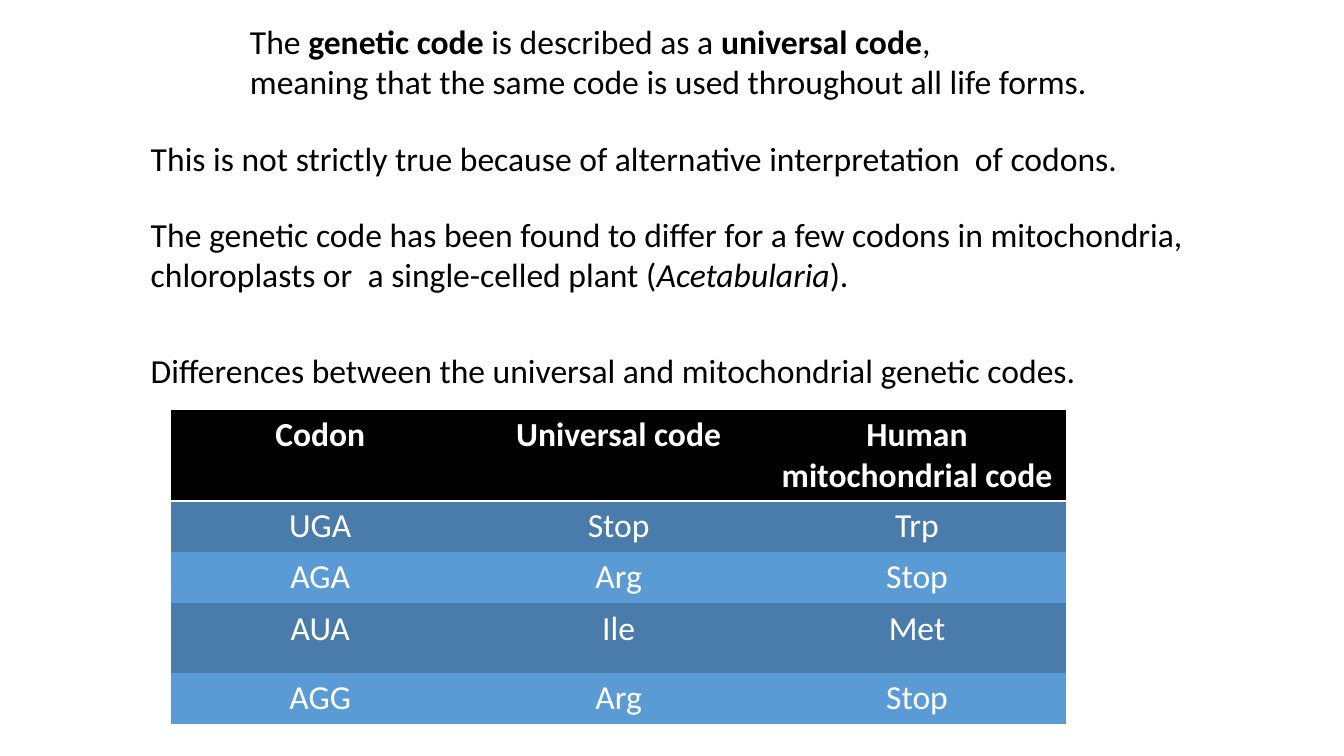
"""Build a slide on the universal genetic code and its mitochondrial exceptions."""
from lxml import etree
from pptx import Presentation
from pptx.dml.color import RGBColor
from pptx.enum.text import PP_ALIGN
from pptx.oxml.ns import qn
from pptx.util import Cm, Pt

CENTER = PP_ALIGN.CENTER
BLACK = RGBColor(0x00, 0x00, 0x00)
WHITE = RGBColor(0xFF, 0xFF, 0xFF)
DARK_BLUE = RGBColor(0x49, 0x7C, 0xAB)
LIGHT_BLUE = RGBColor(0x5B, 0x9B, 0xD5)
PLAIN_TABLE_STYLE = "{2D5ABB26-0587-4C30-8999-92F81FD0307C}"


def add_span(para, text, color, bold=False, italic=False):
    span = para.add_run()
    span.text = text
    span.font.name = "Calibri"
    span.font.size = Pt(24)
    span.font.color.rgb = color
    span.font.bold = bold
    span.font.italic = italic


deck = Presentation()
deck.slide_width = Cm(33.87)
deck.slide_height = Cm(19.05)
page = deck.slides.add_slide(deck.slide_layouts[6])

statements = [
    (6.05, 0.4, 21.8, [
        [("The ", ""), ("genetic code ", "bold"), ("is described as a ", ""),
         ("universal code", "bold"), (",", "")],
        [("meaning that the same code is used throughout all life forms.", "")],
    ]),
    (3.55, 3.36, 25.3, [
        [("This is not strictly true because of alternative interpretation  of codons.", "")],
    ]),
    (3.55, 5.27, 26.8, [
        [("The genetic code has been found to differ for a few codons in mitochondria,", "")],
        [("chloroplasts or  a single-celled plant (", ""), ("Acetabularia", "italic"), (").", "")],
    ]),
    (3.55, 8.7, 24.08, [
        [("Differences between the universal and mitochondrial genetic codes.", "")],
    ]),
]
for left, top, width, lines in statements:
    box = page.shapes.add_textbox(Cm(left), Cm(top), Cm(width), Cm(0.25 + 1.03 * len(lines)))
    frame = box.text_frame
    frame.word_wrap = True
    for index, line in enumerate(lines):
        para = frame.paragraphs[0] if index == 0 else frame.add_paragraph()
        for text, style in line:
            add_span(para, text, BLACK, style == "bold", style == "italic")

codon_rows = [
    ("Codon", "Universal code", "Human mitochondrial code"),
    ("UGA", "Stop", "Trp"),
    ("AGA", "Arg", "Stop"),
    ("AUA", "Ile", "Met"),
    ("AGG", "Arg", "Stop"),
]
row_heights = [2.29, 1.29, 1.29, 1.75, 1.29]
row_fills = [BLACK, DARK_BLUE, LIGHT_BLUE, DARK_BLUE, LIGHT_BLUE]

table = page.shapes.add_table(
    len(codon_rows), 3, Cm(4.31), Cm(10.33), Cm(22.56), Cm(sum(row_heights))).table
table.horz_banding = False
table._tbl.tblPr.find(qn("a:tableStyleId")).text = PLAIN_TABLE_STYLE
for column in table.columns:
    column.width = Cm(7.52)

for row_index, labels in enumerate(codon_rows):
    is_header = row_index == 0
    table.rows[row_index].height = Cm(row_heights[row_index])
    for column_index, label in enumerate(labels):
        cell = table.cell(row_index, column_index)
        cell.fill.solid()
        cell.fill.fore_color.rgb = row_fills[row_index]
        para = cell.text_frame.paragraphs[0]
        para.alignment = CENTER
        add_span(para, label, WHITE, bold=is_header)
        if is_header:
            border = etree.Element(qn("a:lnB"), w=str(Pt(2)))
            border_fill = etree.SubElement(border, qn("a:solidFill"))
            etree.SubElement(border_fill, qn("a:srgbClr"), val=str(WHITE))
            cell._tc.get_or_add_tcPr().insert(0, border)

deck.save("out.pptx")
